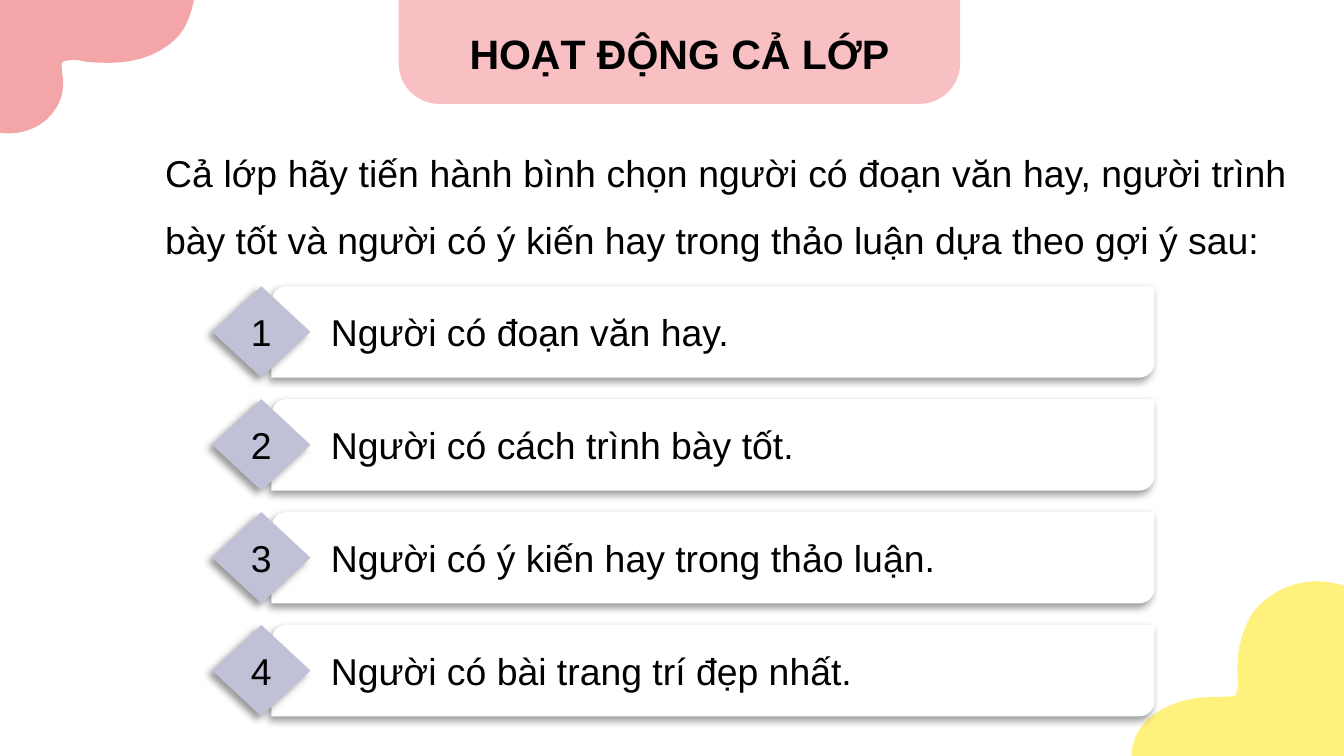
"""Build a class activity slide with four numbered voting criteria."""
from dataclasses import dataclass

from lxml.etree import SubElement
from pptx import Presentation
from pptx.dml.color import RGBColor
from pptx.enum.shapes import MSO_SHAPE
from pptx.enum.text import MSO_ANCHOR, PP_ALIGN
from pptx.oxml.ns import qn
from pptx.util import Inches, Pt


@dataclass(frozen=True)
class Theme:
    font: str = "Arial"
    text: str = "000000"
    card: str = "FFFFFF"
    header: str = "F8C0C3"
    badge: str = "C0C0D7"
    pink: str = "F4A5A7"
    yellow: str = "FFF17E"
    title_size: int = 22
    body_size: int = 20


THEME = Theme()
CRITERIA = [
    "Người có đoạn văn hay.",
    "Người có cách trình bày tốt.",
    "Người có ý kiến hay trong thảo luận.",
    "Người có bài trang trí đẹp nhất.",
]
PINK_START = (-0.48, 0.51)
PINK_CURVES = [
    (-0.51, 0.55, -0.51, 0.6, -0.49, 0.65),
    (-0.4, 0.85, -0.21, 0.97, 0.01, 0.99),
    (0.17, 1.01, 0.34, 0.94, 0.42, 0.8),
    (0.45, 0.75, 0.47, 0.69, 0.47, 0.62),
    (0.47, 0.58, 0.46, 0.54, 0.46, 0.5),
    (0.45, 0.46, 0.48, 0.45, 0.51, 0.45),
    (0.55, 0.44, 0.6, 0.45, 0.64, 0.46),
    (0.86, 0.48, 1.08, 0.47, 1.26, 0.33),
    (1.31, 0.29, 1.35, 0.25, 1.38, 0.19),
    (1.42, 0.11, 1.45, 0.01, 1.46, -0.14),
    (1.47, -0.2, 1.48, -0.28, 1.53, -0.28),
    (1.62, -0.27, 1.75, -0.21, 1.91, -0.15),
    (2.01, -0.12, 2.11, -0.11, 2.21, -0.09),
    (2.4, -0.07, 2.61, -0.11, 2.77, -0.21),
    (2.88, -0.27, 2.98, -0.37, 3.04, -0.48),
    (3.08, -0.54, 3.1, -0.6, 3.11, -0.67),
    (3.16, -0.88, 3.08, -1.1, 2.93, -1.26),
    (2.77, -1.42, 2.55, -1.52, 2.36, -1.63),
    (2.16, -1.75, 1.97, -1.86, 1.77, -1.97),
    (1.67, -2.02, 1.57, -2.09, 1.46, -2.12),
    (1.33, -2.16, 1.21, -2.11, 1.12, -2.02),
    (0.95, -1.88, 0.84, -1.68, 0.73, -1.5),
    (0.49, -1.1, 0.25, -0.71, 0.02, -0.32),
    (-0.1, -0.12, -0.22, 0.08, -0.31, 0.27),
    (-0.34, 0.33, -0.42, 0.46, -0.48, 0.51),
]
YELLOW_START = (10.6, 5.35)
YELLOW_CURVES = [
    (10.65, 5.1, 10.59, 4.82, 10.41, 4.62),
    (10.27, 4.47, 10.08, 4.36, 9.88, 4.33),
    (9.67, 4.3, 9.45, 4.39, 9.32, 4.56),
    (9.27, 4.64, 9.24, 4.73, 9.22, 4.82),
    (9.2, 4.92, 9.21, 5.02, 9.21, 5.12),
    (9.2, 5.16, 9.2, 5.18, 9.17, 5.18),
    (9.07, 5.19, 8.97, 5.18, 8.87, 5.2),
    (8.68, 5.23, 8.47, 5.35, 8.43, 5.54),
    (8.42, 5.58, 8.42, 5.61, 8.42, 5.65),
    (8.44, 5.79, 8.47, 6.01, 9.03, 6.18),
    (9.2, 6.24, 9.39, 6.24, 9.57, 6.21),
    (9.93, 6.16, 10.31, 5.98, 10.49, 5.65),
    (10.54, 5.56, 10.57, 5.46, 10.6, 5.35),
]


def rgb(color):
    return RGBColor.from_string(color)


def trace(start, curves, steps=8):
    """Return points along a chain of cubic Bézier curves."""
    points = [start]
    for x1, y1, x2, y2, x3, y3 in curves:
        x0, y0 = points[-1]
        for i in range(1, steps + 1):
            t = i / steps
            u = 1 - t
            a, b, c, d = u**3, 3 * u * u * t, 3 * u * t * t, t**3
            points.append((a * x0 + b * x1 + c * x2 + d * x3,
                           a * y0 + b * y1 + c * y2 + d * y3))
    return points


def paint(sp, color):
    sp.shadow.inherit = False
    sp.fill.solid()
    sp.fill.fore_color.rgb = rgb(color)
    sp.line.fill.background()


def add_blob(s, start, curves, color):
    points = [(Inches(x), Inches(y)) for x, y in trace(start, curves)]
    builder = s.shapes.build_freeform(*points[0])
    builder.add_line_segments(points[1:])
    paint(builder.convert_to_shape(), color)


def add_box(s, kind, box, color):
    sp = s.shapes.add_shape(kind, *map(Inches, box))
    paint(sp, color)
    return sp


def add_shadow(sp):
    effects = sp._element.spPr.find(qn("a:effectLst"))
    shadow = SubElement(effects, qn("a:outerShdw"), blurRad=str(Pt(4)),
                        dist=str(Pt(3)), dir=str(135 * 60000),
                        algn="tr", rotWithShape="0")
    color = SubElement(shadow, qn("a:srgbClr"), val=THEME.text)
    SubElement(color, qn("a:alpha"), val="40000")


def write(sp, text, size, align, anchor=MSO_ANCHOR.MIDDLE, bold=False):
    tf = sp.text_frame
    tf.word_wrap = True
    tf.vertical_anchor = anchor
    p = tf.paragraphs[0]
    p.text = text
    p.alignment = align
    p.font.name = THEME.font
    p.font.size = Pt(size)
    p.font.bold = bold
    p.font.color.rgb = rgb(THEME.text)
    return p


def add_header(s, title):
    tab = add_box(s, MSO_SHAPE.ROUND_2_SAME_RECTANGLE,
                  (2.98, 0, 4.15, 0.76), THEME.header)
    tab.adjustments[0] = 0.38
    tab._element.spPr.find(qn("a:xfrm")).set("flipV", "1")
    tab.line.color.rgb = rgb(THEME.header)
    tab.line.width = Pt(2)
    label = add_box(s, MSO_SHAPE.RECTANGLE, (3.25, 0.16, 3.61, 0.47), THEME.header)
    write(label, title, THEME.title_size, PP_ALIGN.CENTER, MSO_ANCHOR.TOP, True)


def add_intro(s, text):
    sp = s.shapes.add_textbox(*map(Inches, (1.13, 0.9, 8.55, 1.05)))
    p = write(sp, text, THEME.body_size, PP_ALIGN.JUSTIFY, MSO_ANCHOR.TOP)
    p.line_spacing = 1.5


def add_criterion(s, number, text, top):
    card = add_box(s, MSO_SHAPE.ROUND_2_DIAG_RECTANGLE,
                   (2.02, top, 6.57, 0.68), THEME.card)
    add_shadow(card)
    card.text_frame.margin_left = Inches(0.41)
    write(card, text, THEME.body_size, PP_ALIGN.JUSTIFY)
    badge = add_box(s, MSO_SHAPE.DIAMOND, (1.58, top, 0.73, 0.68), THEME.badge)
    add_shadow(badge)
    write(badge, str(number), THEME.body_size, PP_ALIGN.CENTER)


def main():
    prs = Presentation()
    prs.slide_width = Inches(10)
    prs.slide_height = prs.slide_width * 9 // 16
    s = prs.slides.add_slide(prs.slide_layouts[6])
    add_blob(s, PINK_START, PINK_CURVES, THEME.pink)
    add_blob(s, YELLOW_START, YELLOW_CURVES, THEME.yellow)
    add_header(s, "HOẠT ĐỘNG CẢ LỚP")
    add_intro(s, "Cả lớp hãy tiến hành bình chọn người có đoạn văn hay, người trình "
                 "bày tốt và người có ý kiến hay trong thảo luận dựa theo gợi ý sau:")
    for i, text in enumerate(CRITERIA):
        add_criterion(s, i + 1, text, 2.13 + 0.84 * i)
    prs.save("out.pptx")


if __name__ == "__main__":
    main()
